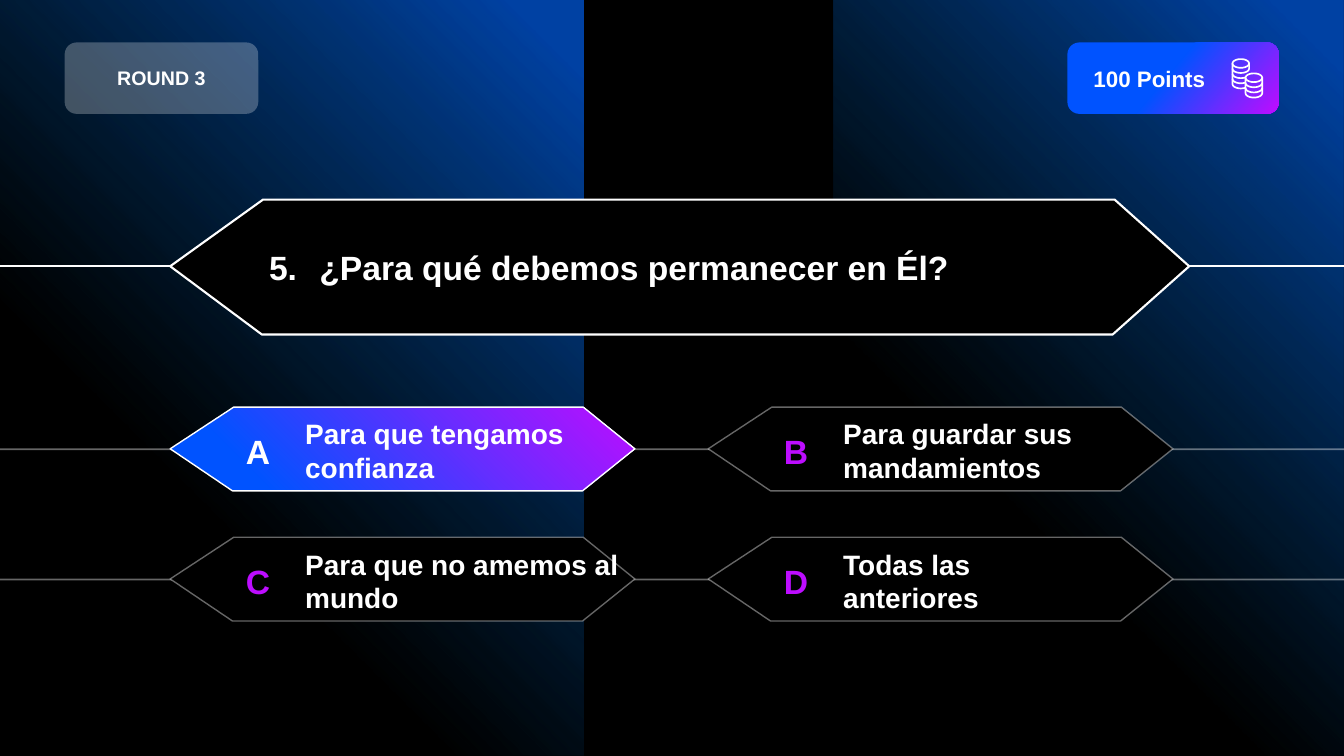
import math
from lxml import etree
from pptx import Presentation
from pptx import util as u
from pptx.dml import color
from pptx.enum import shapes, text
from pptx.oxml import ns, parse_xml

WHITE, BLACK, BLUE, PURPLE = "FFFFFF", "000000", "0053FF", "BD0DFF"
CORNER = '<a:path path="circle"><a:fillToRect l="100000" b="100000"/></a:path>'
DIAGONAL = '<a:lin ang="2400000" scaled="0"/>'


def paint(fill, tone, owner=None, alpha=100):
    fill.solid()
    fill.fore_color.rgb = color.RGBColor.from_string(tone)
    if alpha < 100:
        tint = owner.find(ns.qn("a:solidFill")).find(ns.qn("a:srgbClr"))
        etree.SubElement(tint, ns.qn("a:alpha"), val=str(alpha * 1000))


def blend(shape, stops, direction):
    frame = shape.element.spPr
    gradient = parse_xml(f'<a:gradFill {ns.nsdecls("a")} rotWithShape="1"><a:gsLst/>{direction}</a:gradFill>')
    for place, tone, alpha in stops:
        paint(shape.fill, tone, frame, alpha)
        stop = etree.SubElement(gradient[0], ns.qn("a:gs"), pos=str(place * 1000))
        stop.append(frame.find(ns.qn("a:solidFill"))[0])
    frame.replace(frame.find(ns.qn("a:solidFill")), gradient)


deck = Presentation()
deck.slide_width, deck.slide_height = u.Cm(33.87), u.Cm(19.05)
page = deck.slides.add_slide(deck.slide_layouts[5])
paint(page.background.fill, BLACK)
captions = []

glow = [(0, "0066FF", 63), (6, "0066FF", 63), (66, "0070C0", 0), (100, BLACK, 0)]
for left, width, flipped in [(0, 14.71, "1"), (21.01, 12.86, "0")]:
    panel = page.shapes.add_shape(shapes.MSO_SHAPE.RECTANGLE, u.Cm(left), 0, u.Cm(width), deck.slide_height)
    panel.shadow.inherit = False
    panel.line.fill.background()
    panel.element.spPr.xfrm.set("flipH", flipped)
    blend(panel, glow, CORNER)

for height, weight, alpha in [(6.71, 1.5, 100), (11.32, 1.25, 40), (14.6, 1.25, 40)]:
    rail = page.shapes.add_connector(shapes.MSO_CONNECTOR.STRAIGHT, 0, u.Cm(height), deck.slide_width, u.Cm(height))
    rail.line.width = u.Pt(weight)
    paint(rail.line.fill, WHITE, rail.element.spPr.find(ns.qn("a:ln")), alpha)
    etree.SubElement(rail.element.spPr, ns.qn("a:effectLst"))

question_outline = [(0, 1.68), (2.34, 0), (23.8, 0), (25.68, 1.68), (23.75, 3.4), (2.31, 3.4)]
answer_outline = [(0, 1.05), (1.6, 0), (10.41, 0), (11.71, 1.05), (10.39, 2.11), (1.57, 2.11)]
answers = [
    ("A", "Para que tengamos confianza", 7.37),
    ("B", "Para guardar sus mandamientos", 7.24),
    ("C", "Para que no amemos al mundo", 8.41),
    ("D", "Todas las anteriores", 5.89),
]
plates = [(4.29, 5.03, question_outline, 1.5, 100, False)]
for index, (letter, answer, width) in enumerate(answers):
    row, column = divmod(index, 2)
    left, top = 4.29 + 13.56 * column, 10.26 + 3.28 * row
    chosen = letter == "A"
    plates.append((left, top, answer_outline, 1, 100 if chosen else 40, chosen))

for left, top, outline, weight, alpha, chosen in plates:
    points = [(u.Cm(left + across), u.Cm(top + down)) for across, down in outline]
    builder = page.shapes.build_freeform(*points[0])
    builder.add_line_segments(points[1:], close=True)
    plate = builder.convert_to_shape()
    plate.shadow.inherit = False
    plate.line.width = u.Pt(weight)
    paint(plate.line.fill, WHITE, plate.element.spPr.find(ns.qn("a:ln")), alpha)
    if chosen:
        blend(plate, [(0, PURPLE, 100), (82, BLUE, 100), (100, BLUE, 100)], CORNER)
    else:
        paint(plate.fill, BLACK)

for (letter, answer, width), (left, top, *_, chosen) in zip(answers, plates[1:]):
    for label, shift, span_width, size, tone, align in [
        (letter, 1.55, 1.32, 24, WHITE if chosen else PURPLE, text.PP_ALIGN.CENTER),
        (answer, 3.15, width, 20, WHITE, text.PP_ALIGN.LEFT),
    ]:
        box = page.shapes.add_textbox(u.Cm(left + shift), u.Cm(top + 0.08), u.Cm(span_width), u.Cm(2.03))
        captions.append((box, label, size, tone, align, 0.25))

for left, width, label, size, align, inset in [
    (26.9, 5.33, "100 Points", 16, text.PP_ALIGN.LEFT, 0.57),
    (1.63, 4.88, "ROUND 3", 14, text.PP_ALIGN.CENTER, 0.25),
]:
    badge = page.shapes.add_shape(
        shapes.MSO_SHAPE.ROUNDED_RECTANGLE, u.Cm(left), u.Cm(1.07), u.Cm(width), u.Cm(1.8))
    badge.shadow.inherit = False
    badge.line.fill.background()
    if label == "ROUND 3":
        paint(badge.fill, WHITE, badge.element.spPr, 26)
    else:
        blend(badge, [(0, BLUE, 100), (47, BLUE, 100), (99, PURPLE, 100), (100, PURPLE, 100)], DIAGONAL)
    captions.append((badge, label, size, WHITE, align, inset))

radius, depth, step = 0.21, 0.11, 0.13
coins = []
for middle, top, rims, hidden in [(31.27, 1.6, 4, True), (31.6, 1.96, 3, False)]:
    coins.append([(middle + radius * math.cos(math.radians(angle)), top + depth * math.sin(math.radians(angle)))
                  for angle in range(0, 361, 15)])
    for level in range(1, rims + 1):
        clipped = hidden and level > 1
        height = top + step * level
        rim = [(middle - radius, height - step)]
        rim += [(middle + radius * math.cos(math.radians(angle)), height + depth * math.sin(math.radians(angle)))
                for angle in range(180, 59 if clipped else -1, -15)]
        if not clipped:
            rim.append((middle + radius, height - step))
        coins.append(rim)
for outline in coins:
    points = [(u.Cm(across), u.Cm(down)) for across, down in outline]
    builder = page.shapes.build_freeform(*points[0])
    builder.add_line_segments(points[1:], close=False)
    coin = builder.convert_to_shape()
    coin.shadow.inherit = False
    coin.fill.background()
    coin.line.width = u.Pt(1.2)
    paint(coin.line.fill, WHITE)

title = page.shapes.title
place = {"left": 6.53, "top": 5.05, "width": 21.39, "height": 3.38}
for name, value in place.items():
    setattr(title, name, u.Cm(value))
title.element.getparent().append(title.element)
captions.append((title, "5.\t¿Para qué debemos permanecer en Él?", 24, WHITE, text.PP_ALIGN.LEFT, 0.25))

for box, label, size, tone, align, inset in captions:
    frame_format = {
        "word_wrap": True,
        "auto_size": text.MSO_AUTO_SIZE.NONE,
        "vertical_anchor": text.MSO_ANCHOR.MIDDLE,
        "margin_left": u.Cm(inset),
        "margin_right": u.Cm(0.25),
        "margin_top": u.Cm(0.13),
        "margin_bottom": u.Cm(0.13),
    }
    for name, value in frame_format.items():
        setattr(box.text_frame, name, value)
    para = box.text_frame.paragraphs[0]
    para.alignment = align
    span = para.add_run()
    span.text = label
    for name, value in {"name": "Arial", "size": u.Pt(size), "bold": True}.items():
        setattr(span.font, name, value)
    paint(span.font.fill, tone)

deck.save("out.pptx")
